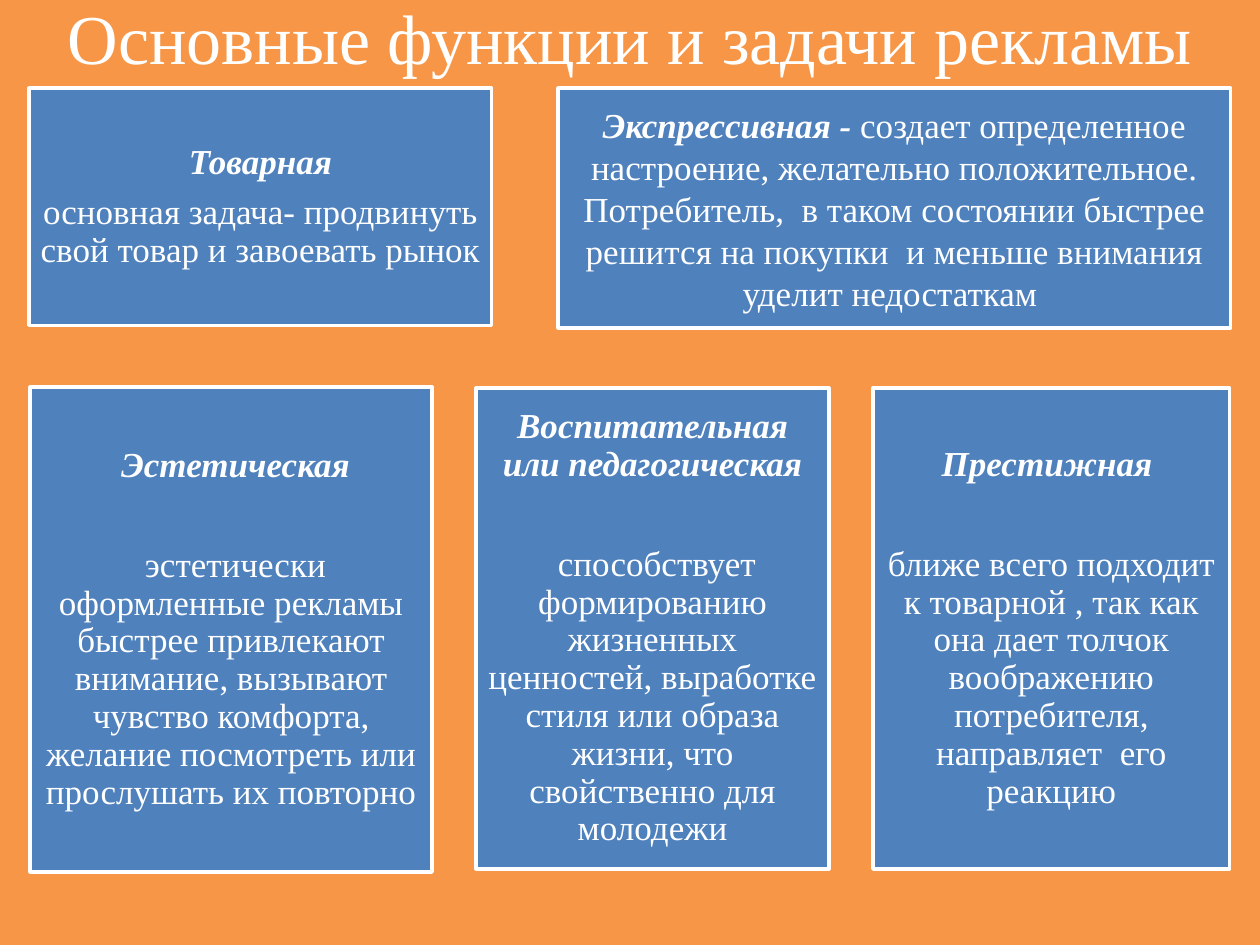
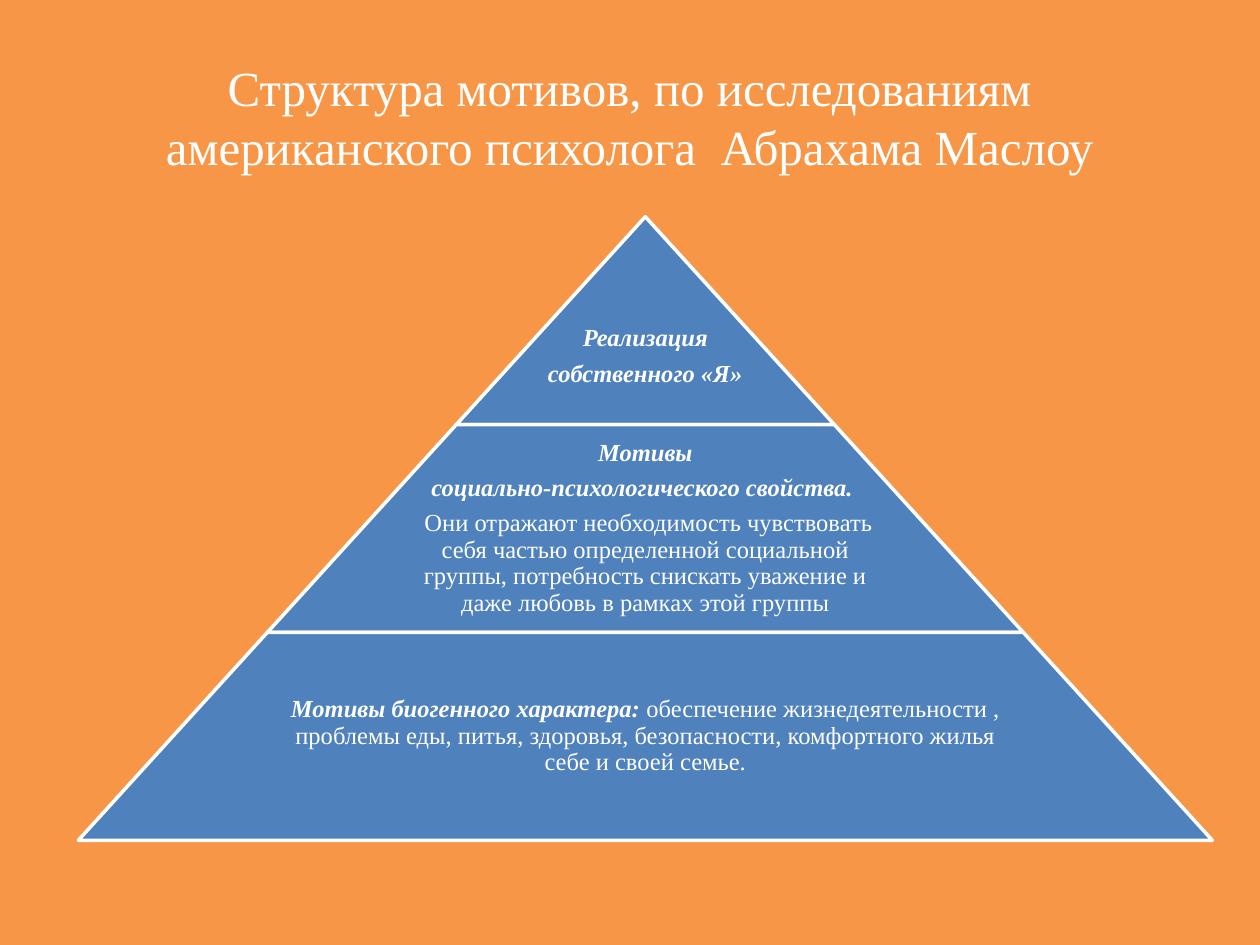
from pptx import Presentation
from pptx import util as u
from pptx.dml.color import RGBColor
from pptx.enum import shapes, text

ORANGE = RGBColor(0xF7, 0x96, 0x46)
BLUE = RGBColor(0x4F, 0x81, 0xBD)
WHITE = RGBColor(0xFF, 0xFF, 0xFF)
FONT = "Times New Roman"
SLIDE_W, SLIDE_H = 25.4, 19.05
TITLE_ONLY = 5

TOP_CARDS = [
    ((0.59, 1.78, 9.32, 4.78), 0.9,
     [[("Товарная", True)],
      [("основная задача- продвинуть свой товар и завоевать рынок", False)]]),
    ((11.25, 1.78, 13.56, 4.83), 1.0,
     [[("Экспрессивная -", True),
       (" создает определенное настроение, желательно положительное. "
        "Потребитель,  в таком состоянии быстрее решится на покупки  "
        "и меньше внимания уделит недостаткам ", False)]]),
]

BOTTOM_CARDS = [
    ((0.61, 7.8, 8.1, 9.78), 0.13, " Эстетическая",
     " эстетически оформленные рекламы быстрее привлекают внимание, вызывают "
     "чувство комфорта, желание посмотреть или прослушать их повторно"),
    ((9.6, 7.82, 7.11, 9.7), 0.2, "Воспитательная или педагогическая",
     " способствует формированию жизненных ценностей, выработке стиля или "
     "образа жизни, что свойственно для молодежи"),
    ((17.6, 7.82, 7.19, 9.7), 0.2, "Престижная ",
     "ближе всего подходит к товарной , так как она дает толчок воображению "
     "потребителя, направляет  его реакцию"),
]

PYRAMID_LEVELS = [
    [[("Реализация", True)], [(" собственного «Я» ", True)]],
    [[(" Мотивы ", True)],
     [("социально-психологического свойства. ", True)],
     [(" Они отражают необходимость чувствовать себя частью определенной "
       "социальной группы, потребность снискать уважение и даже любовь "
       "в рамках этой группы", False)]],
    [[("Мотивы биогенного характера: ", True),
      ("обеспечение жизнедеятельности , проблемы еды, питья, здоровья, "
       "безопасности, комфортного жилья себе и своей семье.", False)]],
]


def cm_box(box):
    """Turn left, top, width and height in centimetres into lengths."""
    return [u.Cm(v) for v in box]


def add_run(p, words, size, strong=False):
    """Add one white run; strong runs are bold italic."""
    r = p.add_run()
    r.text = words
    r.font.name = FONT
    r.font.size = u.Pt(size)
    r.font.color.rgb = WHITE
    r.font.bold = r.font.italic = strong


def write(sp, paragraphs, size, inset, spacing=0.9, first_gap=None, top=None):
    """Fill a shape with centred paragraphs spaced by 35% of the text size."""
    tf = sp.text_frame
    tf.word_wrap = True
    tf.vertical_anchor = text.MSO_ANCHOR.MIDDLE
    tf.margin_left = tf.margin_right = tf.margin_bottom = u.Cm(inset)
    tf.margin_top = u.Cm(inset if top is None else top)
    for i, runs in enumerate(paragraphs):
        p = tf.add_paragraph() if i else tf.paragraphs[0]
        p.alignment = text.PP_ALIGN.CENTER
        p.line_spacing = spacing
        p.space_after = u.Pt(first_gap if first_gap and i == 0 else 0.35 * size)
        for words, strong in runs:
            add_run(p, words, size, strong)


def add_block(s, kind, box):
    """Add a blue preset shape with a white outline."""
    sp = s.shapes.add_shape(kind, *cm_box(box))
    sp.shadow.inherit = False
    sp.fill.solid()
    sp.fill.fore_color.rgb = BLUE
    sp.line.color.rgb = WHITE
    sp.line.width = u.Pt(2)
    return sp


def add_titled_slide(prs, title, size, box):
    """Add a slide whose title placeholder fills the given box."""
    s = prs.slides.add_slide(prs.slide_layouts[TITLE_ONLY])
    sp = s.shapes.title
    sp.left, sp.top, sp.width, sp.height = cm_box(box)
    tf = sp.text_frame
    tf.word_wrap = True
    tf.auto_size = text.MSO_AUTO_SIZE.NONE
    tf.vertical_anchor = text.MSO_ANCHOR.MIDDLE
    p = tf.paragraphs[0]
    p.alignment = text.PP_ALIGN.CENTER
    add_run(p, title, size)
    return s


def add_pyramid(s, box):
    """Stack the levels as equal-height slices of a triangle filling the box."""
    left, top, width, height = box
    count = len(PYRAMID_LEVELS)
    step, slice_h = width / count, height / count
    for i, paragraphs in enumerate(PYRAMID_LEVELS):
        slice_w = step * (i + 1)
        slice_top = top + i * slice_h
        slice_left = left + (width - slice_w) / 2
        sp = add_block(s, shapes.MSO_SHAPE.TRAPEZOID,
                       (slice_left, slice_top, slice_w, slice_h))
        sp.adjustments[0] = step / 2 / slice_h
        text_w = slice_w * 0.65 if i else slice_w
        label = s.shapes.add_textbox(*cm_box(
            (left + (width - text_w) / 2, slice_top, text_w, slice_h)))
        write(label, paragraphs, 14, 0.05, top=None if i else 1.5)


def build_functions_slide(prs):
    """Build the slide with the five functions of advertising."""
    s = add_titled_slide(prs, "Основные функции и задачи рекламы", 40,
                         (0, -0.86, SLIDE_W, 3.18))
    for box, spacing, paragraphs in TOP_CARDS:
        sp = add_block(s, shapes.MSO_SHAPE.RECTANGLE, box)
        write(sp, paragraphs, 20, 0.2, spacing)
    for box, inset, heading, body in BOTTOM_CARDS:
        sp = add_block(s, shapes.MSO_SHAPE.RECTANGLE, box)
        write(sp, [[(heading, True)], [(body, False)]], 20, inset, first_gap=35.5)


def build_motives_slide(prs):
    """Build the slide with the pyramid of motives."""
    s = add_titled_slide(
        prs, "Структура мотивов, по исследованиям американского психолога  "
        "Абрахама Маслоу", 28, (1.78, 0.76, 21.82, 3.18))
    add_pyramid(s, (1.58, 4.37, 22.86, 12.57))


def main():
    """Build and save the presentation."""
    prs = Presentation()
    prs.slide_width, prs.slide_height = u.Cm(SLIDE_W), u.Cm(SLIDE_H)
    fill = prs.slide_master.background.fill
    fill.solid()
    fill.fore_color.rgb = ORANGE
    build_functions_slide(prs)
    build_motives_slide(prs)
    prs.save("out.pptx")


if __name__ == "__main__":
    main()
